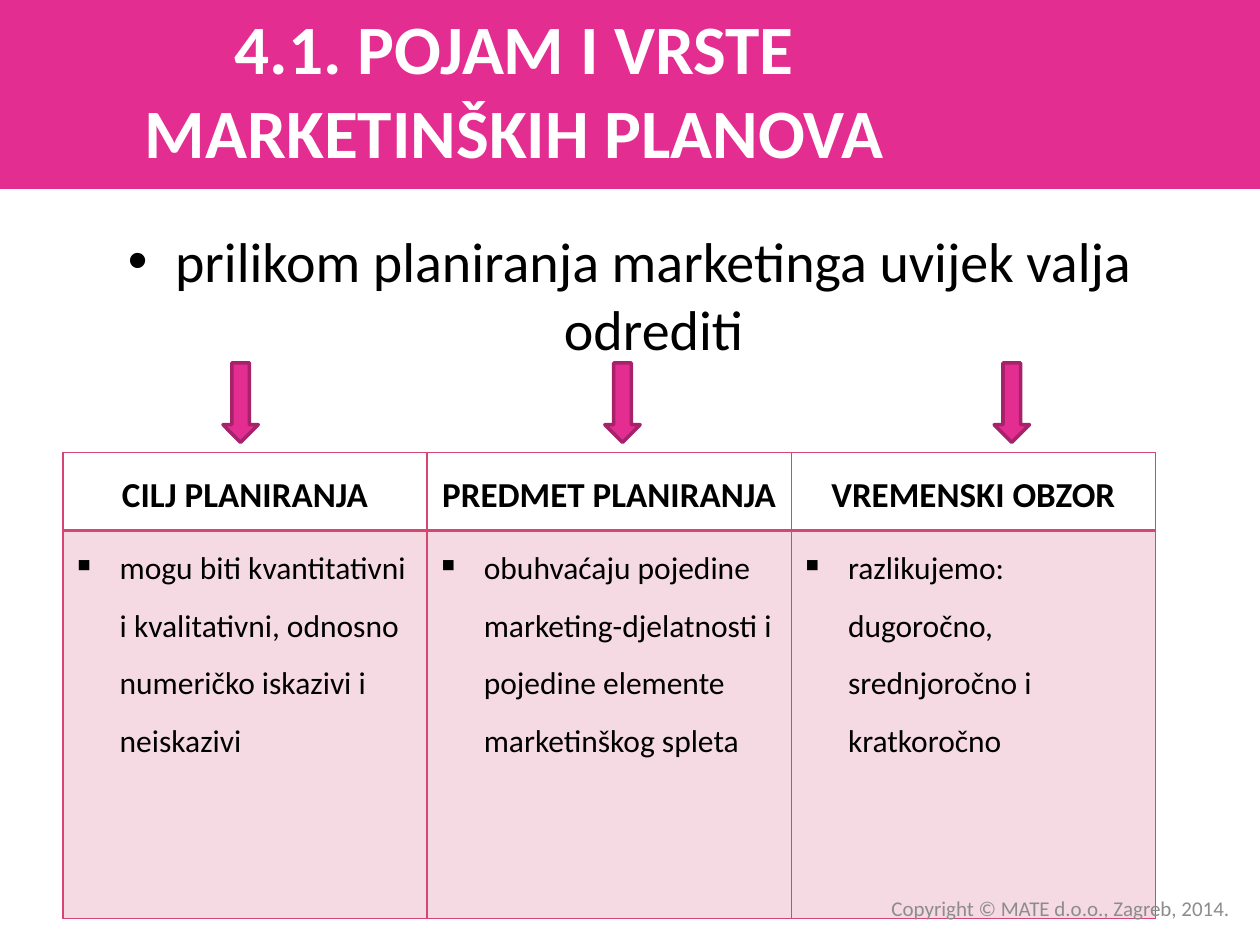
from lxml import etree
from pptx import Presentation
from pptx.dml.color import RGBColor
from pptx.enum.shapes import MSO_SHAPE
from pptx.enum.text import MSO_ANCHOR, MSO_AUTO_SIZE, PP_ALIGN
from pptx.oxml.ns import qn
from pptx.util import Pt

RECTANGLE, DOWN_ARROW = MSO_SHAPE.RECTANGLE, MSO_SHAPE.DOWN_ARROW
LEFT, CENTER, RIGHT = PP_ALIGN.LEFT, PP_ALIGN.CENTER, PP_ALIGN.RIGHT
TOP, MIDDLE = MSO_ANCHOR.TOP, MSO_ANCHOR.MIDDLE
NO_AUTOSIZE = MSO_AUTO_SIZE.NONE

PINK = RGBColor(0xE3, 0x2D, 0x91)
DARK_PINK = RGBColor(0xA8, 0x21, 0x6B)
ROSE = RGBColor(0xD5, 0x47, 0x73)
WHITE = RGBColor(0xFF, 0xFF, 0xFF)
BLACK = RGBColor(0, 0, 0)
GRAY = RGBColor(0x8C, 0x8C, 0x8C)


def write(frame, text, size, color=BLACK, bold=False, align=LEFT,
          spacing=None, bullet=None, indent=27):
    frame.word_wrap = True
    paragraph = frame.paragraphs[0]
    paragraph.text = text
    if bullet:
        properties = paragraph._p.get_or_add_pPr()
        properties.set("marL", str(Pt(indent)))
        properties.set("indent", str(-Pt(indent)))
        etree.SubElement(properties, qn("a:buChar")).set("char", bullet)
    paragraph.alignment = align
    paragraph.space_before = Pt(0)
    if spacing:
        paragraph.line_spacing = spacing
    font = paragraph.runs[0].font
    font.name, font.size, font.bold = "Calibri", Pt(size), bold
    font.color.rgb = color


def draw_borders(cell, widths):
    properties = cell._tc.get_or_add_tcPr()
    for position, (side, width) in enumerate(widths.items()):
        line = etree.Element(qn(f"a:ln{side}"), w=str(Pt(width)))
        fill = etree.SubElement(line, qn("a:solidFill"))
        etree.SubElement(fill, qn("a:srgbClr")).set("val", str(ROSE))
        properties.insert(position, line)


presentation = Presentation()
presentation.slide_width, presentation.slide_height = Pt(720), Pt(540)
slide = presentation.slides.add_slide(presentation.slide_layouts[1])
shapes = slide.shapes

band = shapes.add_shape(RECTANGLE, Pt(0), Pt(0), Pt(720), Pt(108))
band.shadow.inherit = False
band.fill.solid()
band.fill.fore_color.rgb = PINK
band.line.fill.background()
shapes.element.insert(2, band.element)

title = shapes.title
title.left, title.top, title.width, title.height = Pt(0), Pt(5.76), Pt(588), Pt(90)
title.text_frame.auto_size = NO_AUTOSIZE
title.text_frame.vertical_anchor = MIDDLE
write(title.text_frame, "4.1. POJAM I VRSTE MARKETINŠKIH PLANOVA", 39.6,
      color=WHITE, bold=True, align=CENTER)

intro = slide.placeholders[1]
intro.left, intro.top, intro.width, intro.height = Pt(36), Pt(126), Pt(648), Pt(356.4)
intro.text_frame.auto_size = NO_AUTOSIZE
write(intro.text_frame, "prilikom planiranja marketinga uvijek valja odrediti", 32,
      align=CENTER, bullet="•")

columns = [
    ("CILJ PLANIRANJA",
     "mogu biti kvantitativni i kvalitativni, odnosno numeričko iskazivi i neiskazivi"),
    ("PREDMET PLANIRANJA",
     "obuhvaćaju pojedine marketing-djelatnosti i pojedine elemente marketinškog spleta"),
    ("VREMENSKI OBZOR",
     "razlikujemo: dugoročno, srednjoročno i kratkoročno"),
]
plan_table = shapes.add_table(2, 3, Pt(36), Pt(258.5), Pt(624.3), Pt(266.4)).table
plan_table.first_row = plan_table.horz_banding = False
plan_table.rows[0].height, plan_table.rows[1].height = Pt(44.6), Pt(221.8)

for index, (heading, description) in enumerate(columns):
    plan_table.columns[index].width = Pt(208.1)
    header, detail = plan_table.cell(0, index), plan_table.cell(1, index)
    for cell in (header, detail):
        cell.margin_left = cell.margin_right = Pt(5.4)
        cell.margin_top = cell.margin_bottom = Pt(0)
        cell.vertical_anchor = TOP
    write(header.text_frame, heading, 20, bold=True, align=CENTER, spacing=1.5)
    write(detail.text_frame, description, 18, spacing=1.5, bullet="▪")
    header.fill.background()
    detail.fill.solid()
    detail.fill.fore_color.rgb = ROSE
    tint = detail._tc.tcPr.find(qn("a:solidFill")).find(qn("a:srgbClr"))
    etree.SubElement(tint, qn("a:alpha")).set("val", "20000")
    draw_borders(header, {"L": 1, "R": 1, "T": 1, "B": 2})
    draw_borders(detail, {"L": 1, "R": 1, "T": 2, "B": 1})

for arrow_left in (127.4, 345.6, 568.1):
    arrow = shapes.add_shape(DOWN_ARROW, Pt(arrow_left), Pt(207.4), Pt(20.2), Pt(45.4))
    arrow.shadow.inherit = False
    arrow.fill.solid()
    arrow.fill.fore_color.rgb = PINK
    arrow.line.color.rgb = DARK_PINK
    arrow.line.width = Pt(2)

copyright_line = shapes.add_textbox(Pt(337.7), Pt(508.3), Pt(372.2), Pt(21.6))
copyright_line.text_frame.vertical_anchor = MIDDLE
write(copyright_line.text_frame, "Copyright © MATE d.o.o., Zagreb, 2014.", 12,
      color=GRAY, align=RIGHT)

presentation.save("out.pptx")
